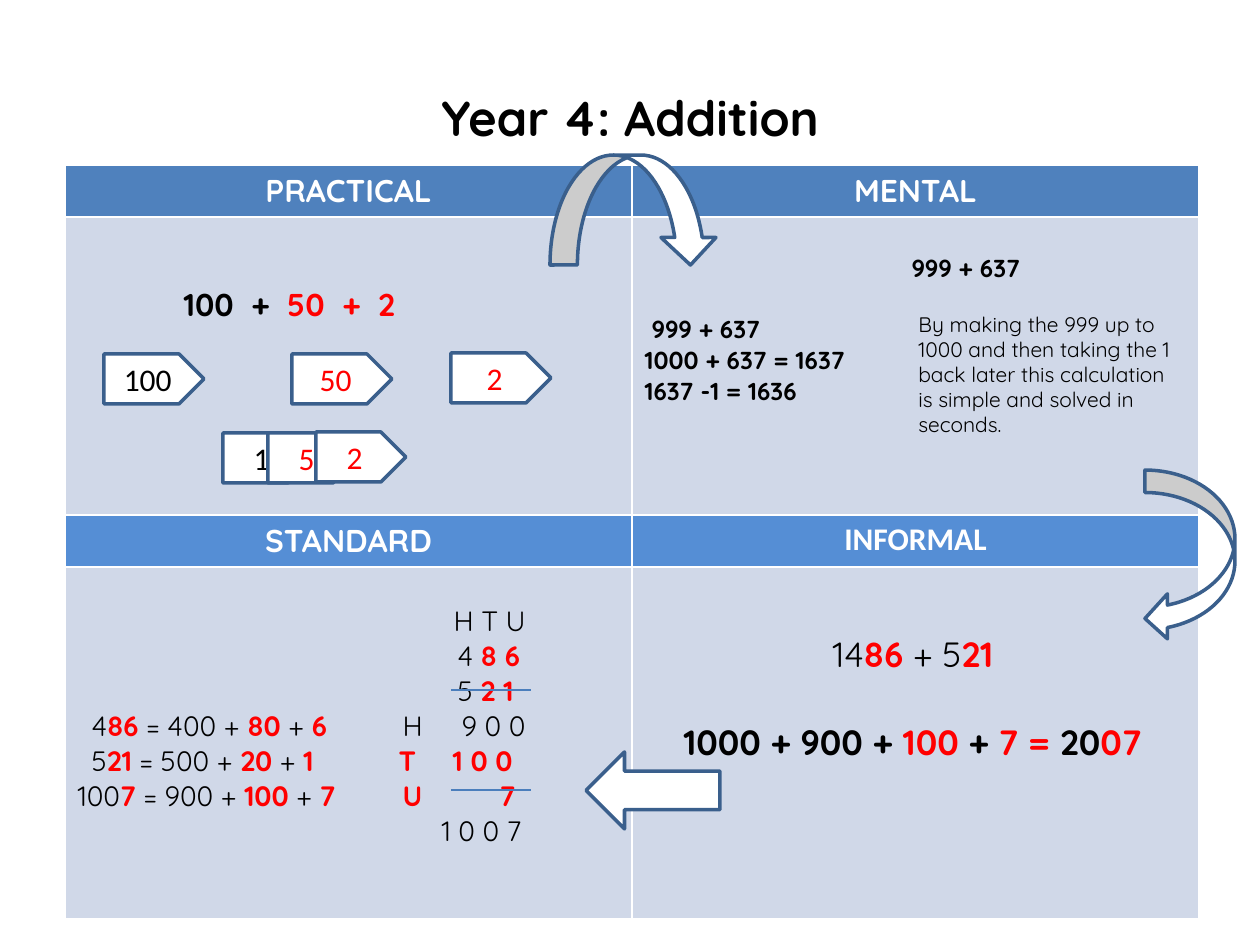
from lxml import etree
from pptx import Presentation
from pptx.dml.color import RGBColor
from pptx.enum.shapes import MSO_CONNECTOR, MSO_SHAPE
from pptx.enum.text import MSO_ANCHOR, PP_ALIGN
from pptx.oxml.ns import qn
from pptx.util import Emu, Pt

PX = 914400 / 126
BLACK = RGBColor(0x00, 0x00, 0x00)
WHITE = RGBColor(0xFF, 0xFF, 0xFF)
RED = RGBColor(0xFF, 0x00, 0x00)
HEADER_BLUE = RGBColor(0x4F, 0x81, 0xBD)
MIDDLE_BLUE = RGBColor(0x55, 0x8E, 0xD5)
CELL_BLUE = RGBColor(0xD0, 0xD8, 0xE8)
OUTLINE = RGBColor(0x3A, 0x5F, 0x8C)
RULE_BLUE = RGBColor(0x4B, 0x7E, 0xBC)
QUICKSAND, CALIBRI = "Quicksand", "Calibri"


def px(length):
    return Emu(round(length * PX))


def set_values(target, values):
    for name, value in values.items():
        setattr(target, name, value)


class SlideBuilder:
    def __init__(self, slide):
        self.slide = slide
        self.shapes = slide.shapes

    def add_text(self, paragraph, text, size, font=QUICKSAND, bold=False,
                 color=BLACK, align=PP_ALIGN.LEFT, before=0, indent=0, tabs=()):
        """Fill one paragraph; the parts between asterisks are bold red."""
        set_values(paragraph, {"alignment": align, "space_before": Pt(before)})
        properties = paragraph._p.get_or_add_pPr()
        if indent:
            properties.set("marL", str(px(indent)))
        if tabs:
            tab_list = etree.SubElement(properties, qn("a:tabLst"))
            for tab in tabs:
                etree.SubElement(tab_list, qn("a:tab"), pos=str(px(tab)), algn="l")
        for index, part in enumerate(text.split("*")):
            if not part:
                continue
            marked = index % 2 == 1
            run = paragraph.add_run()
            run.text = part
            set_values(run.font, {"name": font, "size": Pt(size),
                                  "bold": bold or marked})
            run.font.color.rgb = RED if marked else color

    def add_lines(self, frame, lines, **style):
        for index, (text, layout) in enumerate(lines):
            paragraph = frame.add_paragraph() if index else frame.paragraphs[0]
            self.add_text(paragraph, text, **{**style, **layout})

    def title(self, text, left, top, width, height):
        title = self.shapes.title
        set_values(title, {"left": px(left), "top": px(top),
                           "width": px(width), "height": px(height)})
        title.text_frame.vertical_anchor = MSO_ANCHOR.MIDDLE
        self.add_text(title.text_frame.paragraphs[0], text, 28, bold=True,
                      align=PP_ALIGN.CENTER)

    def table(self, left, top, column_width, row_heights):
        frame = self.shapes.add_table(len(row_heights), 2, px(left), px(top),
                                      px(2 * column_width), px(sum(row_heights)))
        table = frame.table
        table.horz_banding = False
        for column in table.columns:
            column.width = px(column_width)
        for row, height in zip(table.rows, row_heights):
            row.height = px(height)
        return table

    def fill_cell(self, cell, fill, lines, margin_top=6, **style):
        cell.fill.solid()
        cell.fill.fore_color.rgb = fill
        cell.margin_top = px(margin_top)
        self.add_lines(cell.text_frame, lines, **style)

    def shape(self, kind, left, top, width, height, text="", color=BLACK):
        shape = self.shapes.add_shape(kind, px(left), px(top), px(width), px(height))
        shape.shadow.inherit = False
        shape.fill.solid()
        shape.fill.fore_color.rgb = WHITE
        shape.line.color.rgb = OUTLINE
        shape.line.width = Pt(2)
        if text:
            shape.text_frame.vertical_anchor = MSO_ANCHOR.MIDDLE
            self.add_text(shape.text_frame.paragraphs[0], text, 18, CALIBRI,
                          color=color, align=PP_ALIGN.CENTER)

    def text_box(self, left, top, width, height, lines, **style):
        box = self.shapes.add_textbox(px(left), px(top), px(width), px(height))
        box.text_frame.word_wrap = True
        self.add_lines(box.text_frame, lines, **style)

    def rule(self, left, right, y):
        line = self.shapes.add_connector(MSO_CONNECTOR.STRAIGHT,
                                         px(left), px(y), px(right), px(y))
        line.line.color.rgb = RULE_BLUE
        line.line.width = Pt(0.75)
        etree.SubElement(line._element.spPr, qn("a:effectLst"))


def main():
    presentation = Presentation()
    set_values(presentation, {"slide_width": px(1260), "slide_height": px(945)})
    builder = SlideBuilder(presentation.slides.add_slide(presentation.slide_layouts[5]))
    builder.title("Year 4: Addition", 63, 38, 1134, 158)

    # Table with its four headings
    table = builder.table(65, 165, 567, [52, 298, 52, 352])
    headings = [
        (0, 0, "PRACTICAL", HEADER_BLUE, QUICKSAND),
        (0, 1, "MENTAL", HEADER_BLUE, QUICKSAND),
        (2, 0, "STANDARD", MIDDLE_BLUE, QUICKSAND),
        (2, 1, "INFORMAL", MIDDLE_BLUE, CALIBRI),
    ]
    for row, column, text, fill, font in headings:
        builder.fill_cell(table.cell(row, column), fill, [(text, {})], size=18,
                          font=font, bold=True, color=WHITE, align=PP_ALIGN.CENTER)

    # Practical and mental methods
    builder.fill_cell(table.cell(1, 0), CELL_BLUE,
                      [("100  +  *50  +  2*", {"indent": 106})],
                      margin_top=68, size=18, bold=True)
    builder.fill_cell(table.cell(1, 1), CELL_BLUE, [
        ("999 + 637", {"indent": 267}),
        ("999 + 637", {"indent": 7, "before": 17.5}),
        ("1000 + 637 = 1637", {}),
        ("1637 -1 = 1636", {}),
    ], margin_top=36, size=14, bold=True)

    # Standard method, its columns set by tab stops
    builder.fill_cell(table.cell(3, 0), CELL_BLUE, [
        ("\tH T U", {"tabs": [376]}),
        ("\t4 *8 6*", {"tabs": [380]}),
        ("\t5 *2 1*", {"tabs": [380]}),
        ("\t4*86* = 400 + *80* + *6*\tH\t9 0 0", {"tabs": [14, 325, 384]}),
        ("\t5*21* = 500 + *20* + *1\tT\t1 0 0*", {"tabs": [14, 321, 375]}),
        ("100*7* = 900 + *100* + *7\tU\t7*", {"tabs": [325, 422]}),
        ("\t1 0 0 7", {"tabs": [364]}),
    ], margin_top=37, size=16)

    # Informal method
    builder.fill_cell(table.cell(3, 1), CELL_BLUE, [
        ("14*86* + 5*21*", {"indent": 188}),
        ("1000 + 900 +* 100 *+* 7 = *20*07*",
         {"indent": 39, "before": 25, "bold": True}),
    ], margin_top=66, size=20)

    # Place value cards, apart and then overlapping
    cards = [
        (104, 354, 100, "100", BLACK), (292, 354, 100, "50", RED),
        (451, 353, 100, "2", RED), (223, 433, 90, "1", BLACK),
        (268, 433, 90, "5", RED), (316, 432, 90, "2", RED),
    ]
    for left, top, width, text, color in cards:
        builder.shape(MSO_SHAPE.PENTAGON, left, top, width, 50, text, color)

    # Explanation of the mental method
    explanation = [
        "By making the 999 up to",
        "1000 and then taking the 1 back later this calculation",
        "is simple and solved in",
        "seconds.",
    ]
    builder.text_box(906, 305, 290, 165, [(line, {}) for line in explanation], size=12)

    # Rules of the column sum
    for y in (690, 790):
        builder.rule(451, 531, y)

    # Arrows from one method to the next
    builder.shape(MSO_SHAPE.CURVED_DOWN_ARROW, 550, 155, 168, 110)
    builder.shape(MSO_SHAPE.CURVED_LEFT_ARROW, 1145, 470, 90, 171)
    builder.shape(MSO_SHAPE.LEFT_ARROW, 586, 752, 134, 77)

    presentation.save("out.pptx")


if __name__ == "__main__":
    main()
